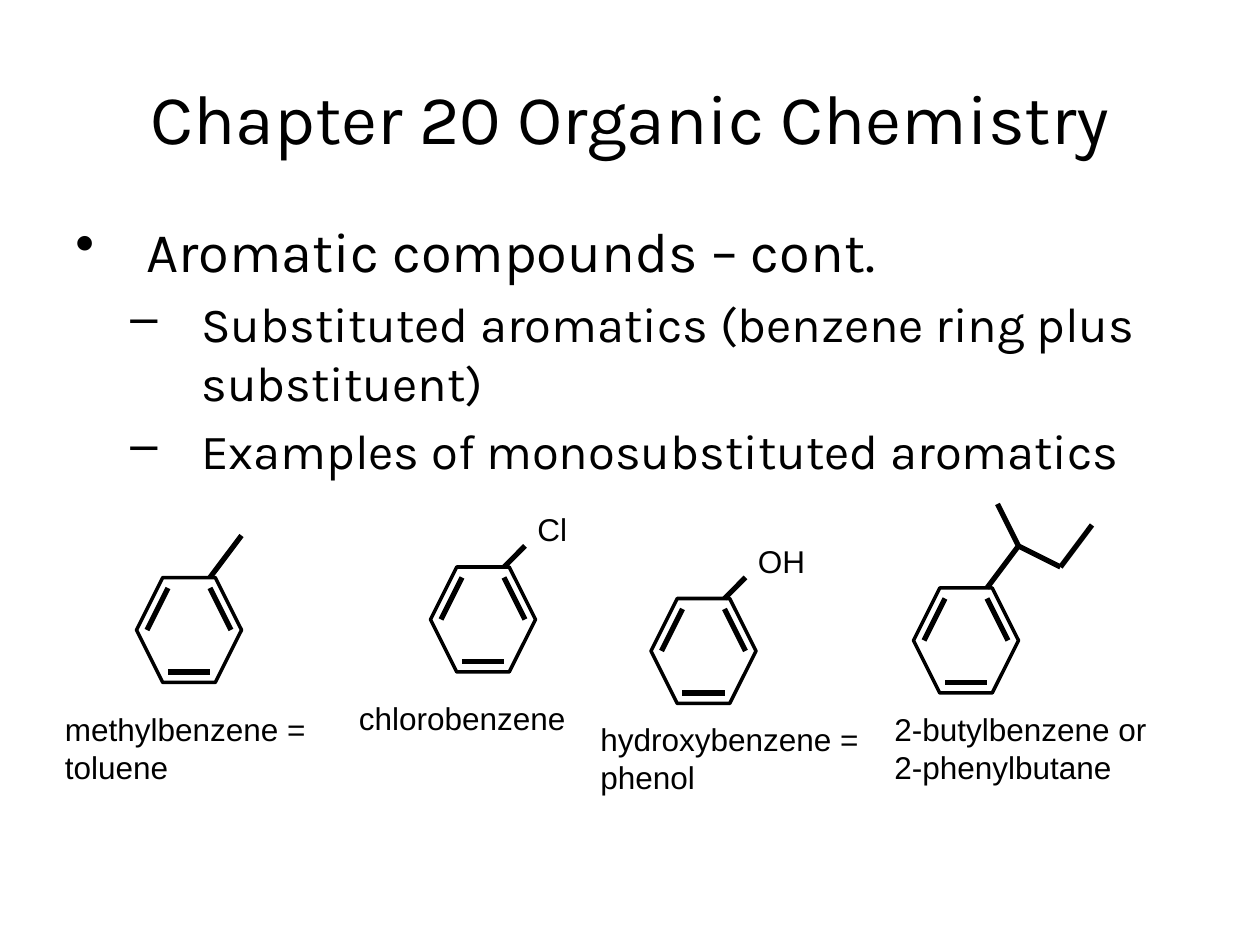
import pptx
import pptx.dml.color
import pptx.enum.shapes
import pptx.enum.text
import pptx.oxml.ns
import pptx.util
from lxml import etree

Pt = pptx.util.Pt
BLACK = pptx.dml.color.RGBColor(0, 0, 0)

RING_SIZE = 60
# Bonds and label offsets are measured from the ring's top left corner.
DOUBLE_BONDS = [((18, 54), (42, 54)), ((6, 30), (18, 6)), ((42, 6), (54, 30))]
ATTACHMENT = (42, 0)
METHYL_BONDS = [(ATTACHMENT, (60, -24))]
SHORT_BONDS = [(ATTACHMENT, (54, -12))]
BUTYL_BONDS = METHYL_BONDS + [
    ((60, -24), (84, -12)),
    ((60, -24), (48, -48)),
    ((84, -12), (102, -36)),
]
GROUP_LABEL_OFFSET = (54, -36)

# Ring corner, substituent bonds, substituent label, name, name position, name width
MOLECULES = [
    ((78, 330), METHYL_BONDS, None, ["methylbenzene = toluene"], (30, 402), 204),
    ((246, 324), SHORT_BONDS, "Cl", ["chlorobenzene"], (198, 396), 144),
    ((372, 342), SHORT_BONDS, "OH", ["hydroxybenzene = phenol"], (336, 408), 204),
    ((522, 336), BUTYL_BONDS, None,
     ["2-butylbenzene or", "2-phenylbutane"], (504, 402), 204),
]

# Text, size, left margin, bullet
OUTLINE = [
    ("Aromatic compounds – cont.", 32, 40.5, "•"),
    ("Substituted aromatics (benzene ring plus substituent)", 28, 72, "–"),
    ("Examples of monosubstituted aromatics", 28, 72, "–"),
]
HANGING_INDENT = 40.5


def add_text(slide, position, size, lines, font_name, font_size):
    box = slide.shapes.add_textbox(*map(Pt, position + size))
    frame = box.text_frame
    frame.word_wrap = True
    frame.text = "\n".join(lines)
    for paragraph in frame.paragraphs:
        paragraph.font.name = font_name
        paragraph.font.size = Pt(font_size)
        paragraph.font.color.rgb = BLACK
    return frame


def add_title(slide, text):
    frame = add_text(slide, (36, 21.6), (648, 90), [text], "Karla", 40)
    frame.vertical_anchor = pptx.enum.text.MSO_ANCHOR.MIDDLE
    frame.paragraphs[0].alignment = pptx.enum.text.PP_ALIGN.CENTER


def set_bullet(paragraph, character, margin):
    properties = paragraph._p.get_or_add_pPr()
    properties.set("marL", str(Pt(margin)))
    properties.set("indent", str(-Pt(HANGING_INDENT)))
    bullet = etree.SubElement(properties, pptx.oxml.ns.qn("a:buChar"))
    bullet.set("char", character)


def add_outline(slide):
    lines = [text for text, *_ in OUTLINE]
    frame = add_text(slide, (36, 120), (642, 216), lines, "Karla", 28)
    for paragraph, (_, size, margin, character) in zip(frame.paragraphs, OUTLINE):
        paragraph.font.size = Pt(size)
        paragraph.space_before = Pt(size * 0.2)
        set_bullet(paragraph, character, margin)


def add_bonds(shapes, corner, bonds):
    left, top = corner
    for (x1, y1), (x2, y2) in bonds:
        bond = shapes.add_connector(
            pptx.enum.shapes.MSO_CONNECTOR.STRAIGHT,
            Pt(left + x1), Pt(top + y1), Pt(left + x2), Pt(top + y2))
        bond.line.color.rgb = BLACK
        bond.line.width = Pt(3)
        etree.SubElement(bond._element.spPr, pptx.oxml.ns.qn("a:effectLst"))


def add_benzene_ring(slide, corner):
    group = slide.shapes.add_group_shape()
    left, top = corner
    ring = group.shapes.add_shape(
        pptx.enum.shapes.MSO_SHAPE.HEXAGON,
        Pt(left), Pt(top), Pt(RING_SIZE), Pt(RING_SIZE))
    ring.shadow.inherit = False
    ring.fill.background()
    ring.line.color.rgb = BLACK
    ring.line.width = Pt(2)
    add_bonds(group.shapes, corner, DOUBLE_BONDS)


def add_molecule(slide, corner, bonds, label, name, name_position, name_width):
    add_benzene_ring(slide, corner)
    add_bonds(slide.shapes, corner, bonds)
    if label:
        position = (corner[0] + GROUP_LABEL_OFFSET[0],
                    corner[1] + GROUP_LABEL_OFFSET[1])
        add_text(slide, position, (48, 29), [label], "Arial", 18)
    name_height = 29 if name_width < 200 else 51
    add_text(slide, name_position, (name_width, name_height), name, "Arial", 18)


def main():
    presentation = pptx.Presentation()
    presentation.slide_width = Pt(720)
    presentation.slide_height = Pt(540)
    slide = presentation.slides.add_slide(presentation.slide_layouts[6])
    add_title(slide, "Chapter 20 Organic Chemistry")
    add_outline(slide)
    for molecule in MOLECULES:
        add_molecule(slide, *molecule)
    presentation.save("out.pptx")


if __name__ == "__main__":
    main()
